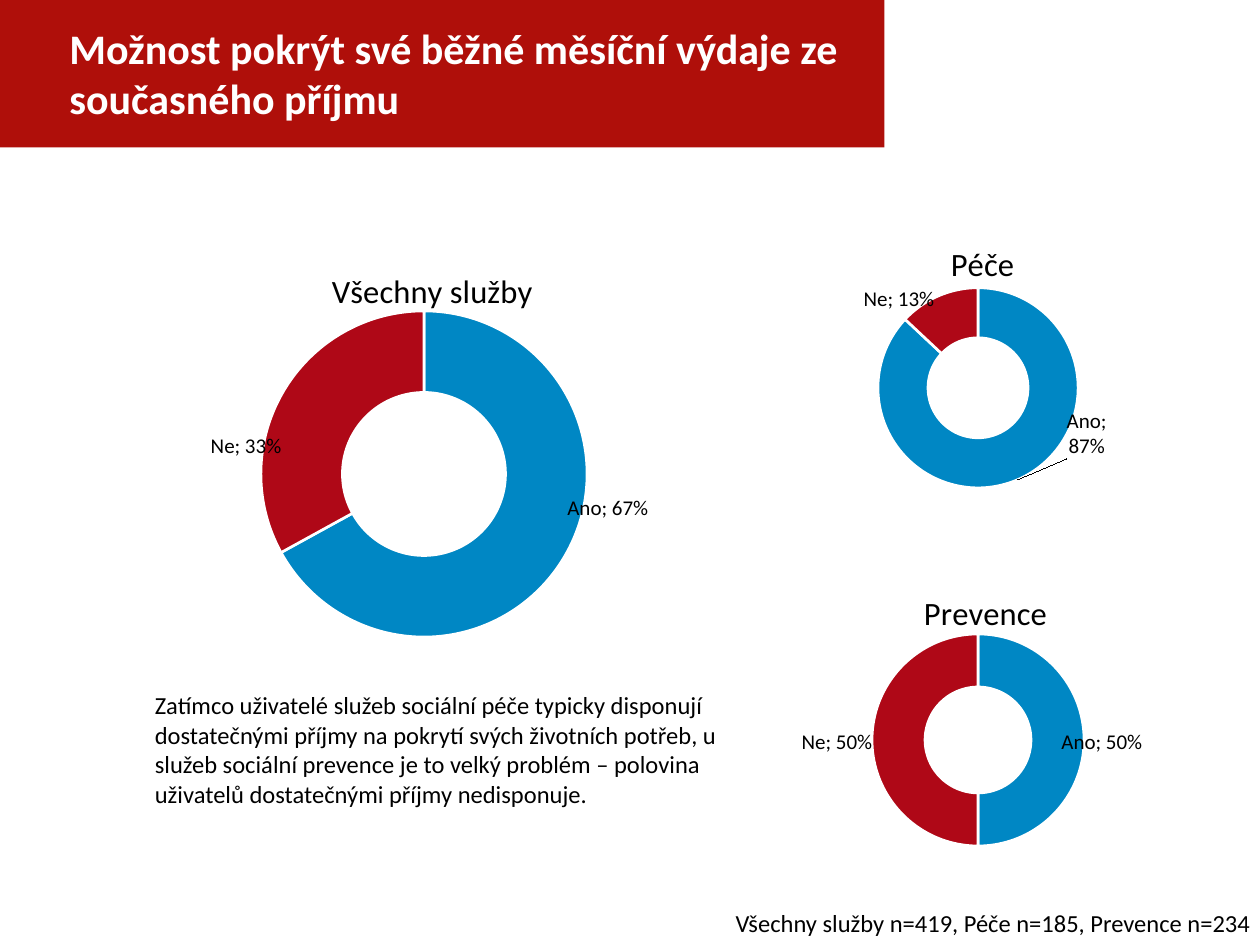
from dataclasses import dataclass
from math import cos, pi, sin

from lxml.etree import SubElement
from pptx import Presentation
from pptx.chart.data import CategoryChartData
from pptx.dml.color import RGBColor
from pptx.enum.chart import XL_CHART_TYPE
from pptx.enum.text import MSO_ANCHOR, MSO_AUTO_SIZE, PP_ALIGN
from pptx.oxml import parse_xml
from pptx.oxml.ns import nsdecls, qn
from pptx.util import Pt


@dataclass(frozen=True)
class Theme:
    font: str = "Calibri"
    banner: RGBColor = RGBColor(0xAF, 0x0F, 0x0A)
    yes: RGBColor = RGBColor(0x00, 0x87, 0xC4)
    no: RGBColor = RGBColor(0xAF, 0x08, 0x17)
    white: RGBColor = RGBColor(0xFF, 0xFF, 0xFF)
    black: RGBColor = RGBColor(0, 0, 0)
    title: float = 24
    chart_title: float = 18.6
    body: float = 14
    label: float = 12
    chart_text: float = 10


@dataclass(frozen=True)
class Box:
    left: float
    top: float
    width: float
    height: float

    def lengths(self) -> tuple:
        return Pt(self.left), Pt(self.top), Pt(self.width), Pt(self.height)


@dataclass(frozen=True)
class Donut:
    """Places are slide points: title is a corner, the others are centres."""
    name: str
    yes_share: float
    frame: Box
    title: tuple[float, float]
    centre: tuple[float, float]
    radius: float
    yes_label: tuple[float, float]
    no_label: tuple[float, float]


THEME = Theme()
DONUTS = [
    Donut("Péče", 0.87, Box(434.2, 110.9, 249.8, 183.6), (540, 134.5),
          (558.9, 221.7), 57.2, (621, 248), (513.7, 171)),
    Donut("Prevence", 0.5, Box(434.2, 310.3, 249.8, 183.6), (524.6, 334),
          (558.9, 422.9), 60.6, (629.7, 424), (478.3, 424)),
    Donut("Všechny služby", 0.67, Box(71.3, 124.6, 342, 250.6), (186.3, 150),
          (242.3, 270.9), 93.2, (347.4, 290.3), (140.6, 255)),
]


def style(font, size: float, color: RGBColor, bold: bool = False) -> None:
    font.name, font.size, font.bold = THEME.font, Pt(size), bold
    font.color.rgb = color


def set_layout(parent, index: int, **settings) -> None:
    """Give a chart part a manual layout, settings in schema order."""
    for old in parent.findall(qn("c:layout")):
        parent.remove(old)
    layout = parse_xml(f"<c:layout {nsdecls('c')}><c:manualLayout/></c:layout>")
    for name, value in settings.items():
        text = value if isinstance(value, str) else f"{value:.4f}"
        SubElement(layout[0], qn(f"c:{name}")).set("val", text)
    parent.insert(index, layout)


def add_donut(page, donut: Donut) -> None:
    frame = donut.frame
    shares = (donut.yes_share, round(1 - donut.yes_share, 2))
    data = CategoryChartData(number_format="0%")
    data.categories = ["Ano", "Ne"]
    data.add_series(donut.name, shares)
    chart = page.shapes.add_chart(XL_CHART_TYPE.DOUGHNUT, *frame.lengths(), data).chart
    chart.has_legend = False
    style(chart.font, THEME.chart_text, THEME.black)

    chart.has_title = True
    paragraph = chart.chart_title.text_frame.paragraphs[0]
    paragraph.text = donut.name
    style(paragraph.font, THEME.chart_title, THEME.black)
    set_layout(chart.chart_title._element, 1, xMode="edge", yMode="edge",
               x=(donut.title[0] - frame.left) / frame.width,
               y=(donut.title[1] - frame.top) / frame.height)

    plot = chart.plots[0]
    plot.vary_by_categories = True
    plot._element.find(qn("c:holeSize")).set("val", "75")
    center_x, center_y = donut.centre
    set_layout(plot._element.getparent(), 0, layoutTarget="inner",
               xMode="edge", yMode="edge",
               x=(center_x - donut.radius - frame.left) / frame.width,
               y=(center_y - donut.radius - frame.top) / frame.height,
               w=2 * donut.radius / frame.width,
               h=2 * donut.radius / frame.height)

    series = plot.series[0]
    labels = series.data_labels
    labels.show_value = True
    labels.number_format, labels.number_format_is_linked = "0%", False
    style(labels.font, THEME.label, THEME.black)
    slices = zip(shares, (THEME.yes, THEME.no), (donut.yes_label, donut.no_label))
    start = 0.0
    for index, (share, color, place) in enumerate(slices):
        point = series.points[index]
        point.format.fill.solid()
        point.format.fill.fore_color.rgb = color
        point.format.line.color.rgb = THEME.white
        point.format.line.width = Pt(1.5)
        style(point.data_label.font, THEME.label, THEME.black)
        label = labels._element.findall(qn("c:dLbl"))[index]
        label.find(qn("c:showCatName")).set("val", "1")
        SubElement(label, qn("c:separator")).text = "; "
        # Labels start in the middle of their ring segment.
        angle = 2 * pi * (start + share / 2)
        middle = 0.75 * donut.radius
        set_layout(label, 1,
                   x=(place[0] - center_x - middle * sin(angle)) / frame.width,
                   y=(place[1] - center_y + middle * cos(angle)) / frame.height)
        start += share


def add_text(page, box: Box, text: str) -> None:
    frame = page.shapes.add_textbox(*box.lengths()).text_frame
    frame.word_wrap = True
    frame.auto_size = MSO_AUTO_SIZE.SHAPE_TO_FIT_TEXT
    frame.text = text
    style(frame.paragraphs[0].font, THEME.body, THEME.black)


def format_title(title, box: Box, text: str) -> None:
    title.left, title.top, title.width, title.height = box.lengths()
    title.fill.solid()
    title.fill.fore_color.rgb = THEME.banner
    frame = title.text_frame
    frame.auto_size = MSO_AUTO_SIZE.NONE
    frame.word_wrap = True
    frame.vertical_anchor = MSO_ANCHOR.MIDDLE
    frame.margin_left = Pt(39.6)
    frame.text = text
    paragraph = frame.paragraphs[0]
    paragraph.alignment = PP_ALIGN.LEFT
    style(paragraph.font, THEME.title, THEME.white, bold=True)


def main() -> None:
    deck = Presentation()
    deck.slide_width, deck.slide_height = Pt(720), Pt(540)
    page = deck.slides.add_slide(deck.slide_layouts[5])
    format_title(page.shapes.title, Box(0, -1.4, 505.4, 85.7),
                 "Možnost pokrýt své běžné měsíční výdaje ze současného příjmu")
    for donut in DONUTS:
        add_donut(page, donut)
    add_text(page, Box(413.3, 515.5, 309.6, 24.5),
             "Všechny služby n=419, Péče n=185, Prevence n=234")
    add_text(page, Box(81.4, 391, 342, 74.9),
             "Zatímco uživatelé služeb sociální péče typicky disponují dostatečnými "
             "příjmy na pokrytí svých životních potřeb, u služeb sociální prevence je "
             "to velký problém – polovina uživatelů dostatečnými příjmy nedisponuje.")
    deck.save("out.pptx")


if __name__ == "__main__":
    main()
